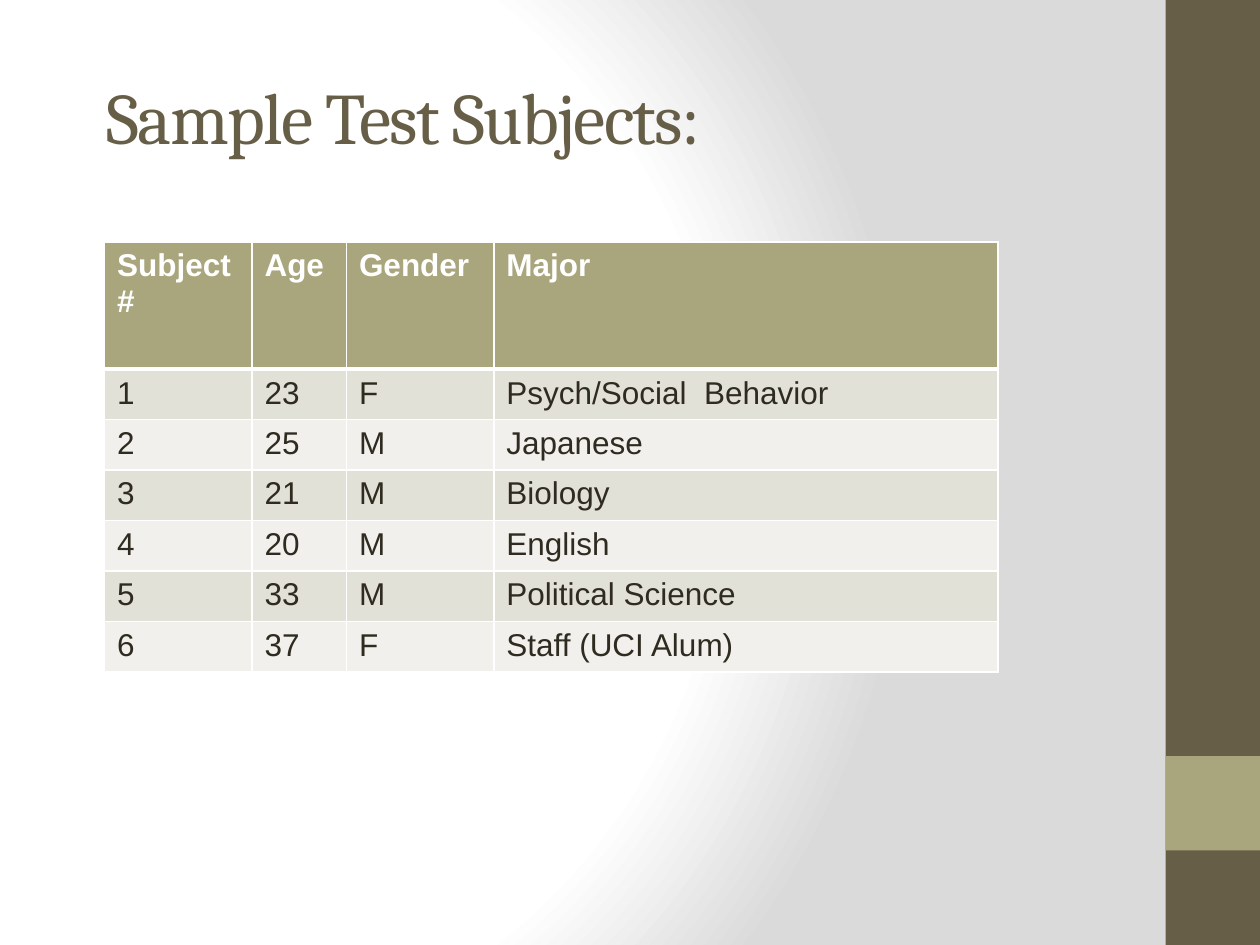
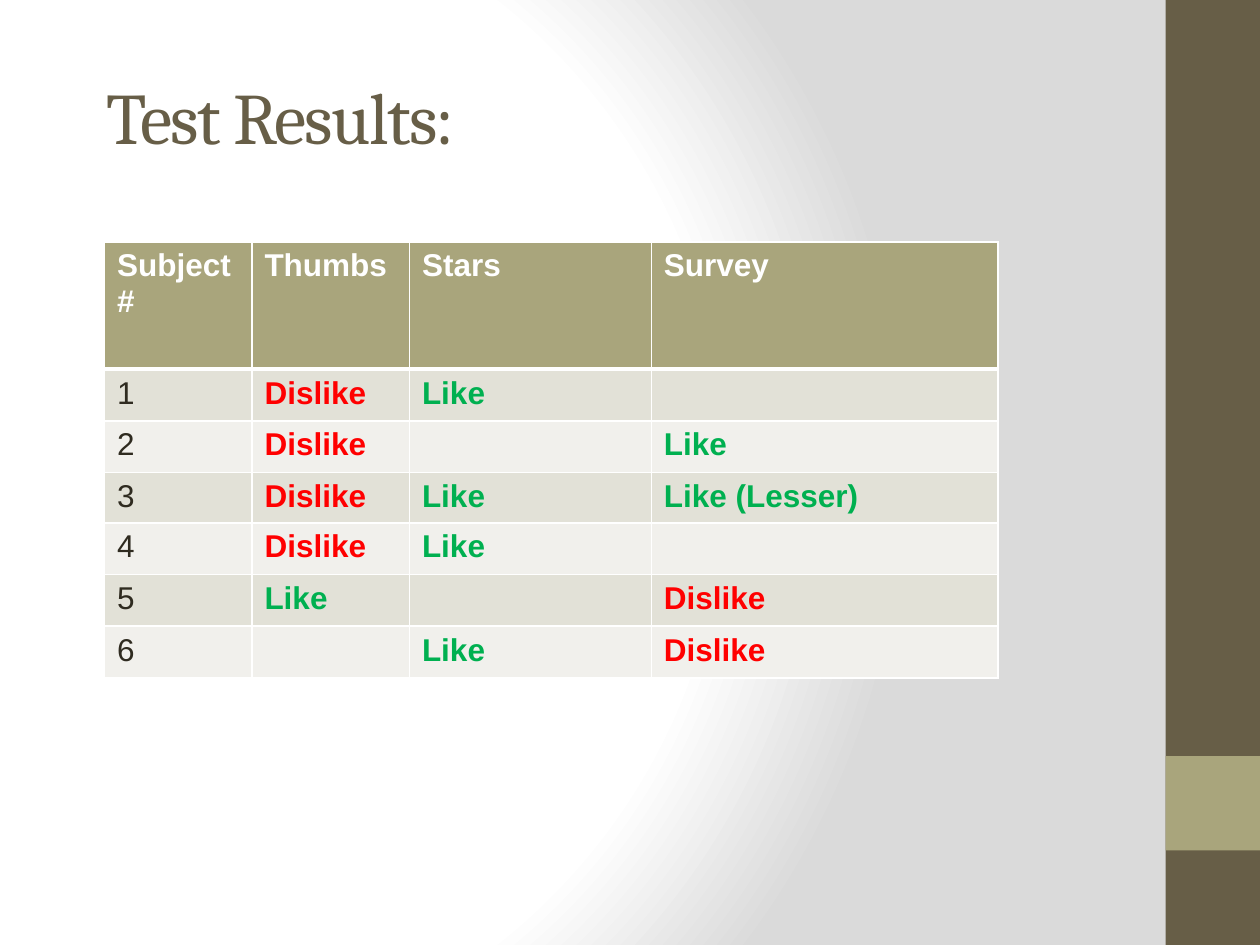
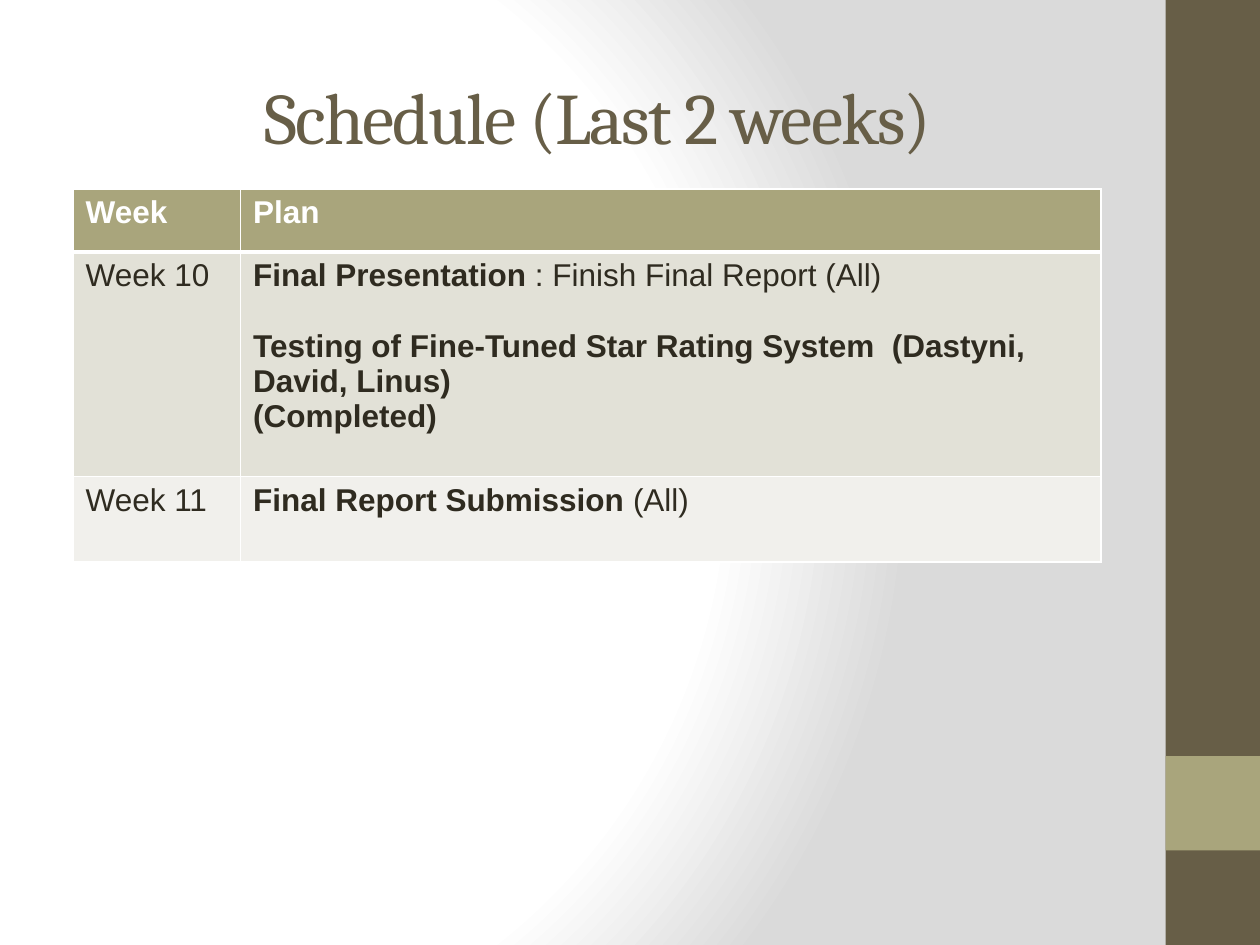
from dataclasses import dataclass
from typing import NamedTuple

from lxml import etree
from pptx import Presentation
from pptx import util as u
from pptx.dml.color import RGBColor
from pptx.enum import shapes, text
from pptx.oxml import parse_xml
from pptx.oxml.ns import nsdecls, qn

# Shared look
BROWN, OLIVE, INK, WHITE = "675E47", "A9A57C", "2F2B20", "FFFFFF"
ROW_FILLS = ("E2E1D7", "F1F0EC")
VERDICT_COLORS = {"Dislike": "FF0000", "Like": "00B050"}
TITLE_FONT, BODY_FONT = "Cambria", "Arial"
BODY_SIZE = u.Pt(18)
BACKGROUND_STOPS = ((0, WHITE), (75, WHITE), (100, "DADADA"))


class Band(NamedTuple):
    top: float
    height: float
    color: str


class Run(NamedTuple):
    text: str
    bold: bool = False
    color: str = INK


class Line(NamedTuple):
    runs: tuple[Run, ...]
    space_before: float = 0


Cell = tuple[Line, ...]
BANDS = (Band(0, 7.5, BROWN), Band(6, 0.75, OLIVE))


@dataclass
class TableSlide:
    title: str
    left: float
    top: float
    widths: tuple[float, ...]
    heights: tuple[float, ...]
    headings: tuple[str, ...]
    rows: list[tuple[Cell, ...]]
    title_left: float = 0.75
    title_width: float = 8.25
    title_align: text.PP_ALIGN = text.PP_ALIGN.LEFT


def rgb(color: str) -> RGBColor:
    return RGBColor.from_string(color)


def plain(words: str, bold: bool = False, color: str = INK) -> Cell:
    return (Line((Run(words, bold, color),)),) if words else ()


def verdict(words: str) -> Cell:
    """A bold answer in the colour of its first word."""
    return plain(words, True, VERDICT_COLORS[words.split()[0]]) if words else ()


def add_run(paragraph, words: str, **formats):
    """Add a run, setting its font from the given values."""
    run = paragraph.add_run()
    run.text = words
    run.font.color.rgb = rgb(formats.pop("color"))
    for name, value in formats.items():
        setattr(run.font, name, value)
    return run


def paint_background(slide) -> None:
    """Fill the slide with a round white-to-grey gradient."""
    slide.background.fill.solid()
    solid = slide.element.find(".//" + qn("a:solidFill"))
    stops = "".join(
        f'<a:gs pos="{place * 1000}"><a:srgbClr val="{color}"/></a:gs>'
        for place, color in BACKGROUND_STOPS
    )
    gradient = parse_xml(
        f'<a:gradFill {nsdecls("a")} rotWithShape="1"><a:gsLst>{stops}</a:gsLst>'
        '<a:path path="circle"><a:fillToRect l="20000" t="50000" r="100000" b="50000"/>'
        "</a:path></a:gradFill>"
    )
    solid.getparent().replace(solid, gradient)


def add_band(slide, band: Band) -> None:
    shape = slide.shapes.add_shape(
        shapes.MSO_SHAPE.RECTANGLE,
        u.Inches(9.25), u.Inches(band.top), u.Inches(0.75), u.Inches(band.height),
    )
    shape.shadow.inherit = False
    shape.fill.solid()
    shape.fill.fore_color.rgb = rgb(band.color)
    shape.line.fill.background()


def add_title(slide, content: TableSlide) -> None:
    box = slide.shapes.add_textbox(
        u.Inches(content.title_left), u.Inches(0.58),
        u.Inches(content.title_width), u.Inches(0.68),
    )
    frame = box.text_frame
    frame.word_wrap = True
    frame.vertical_anchor = text.MSO_ANCHOR.MIDDLE
    paragraph = frame.paragraphs[0]
    paragraph.alignment = content.title_align
    run = add_run(paragraph, content.title, color=BROWN, name=TITLE_FONT, size=u.Pt(41.4))
    run.font._element.set("spc", "-100")


def set_borders(cell, top: int, bottom: int) -> None:
    """Draw white borders; top and bottom widths are in points."""
    properties = cell._tc.get_or_add_tcPr()
    for side, width in {"L": 1, "R": 1, "T": top, "B": bottom}.items():
        line = etree.SubElement(properties, qn(f"a:ln{side}"), w=str(u.Pt(width)))
        fill = etree.SubElement(line, qn("a:solidFill"))
        etree.SubElement(fill, qn("a:srgbClr"), val=WHITE)


def fill_cell(cell, lines: Cell, color: str) -> None:
    cell.fill.solid()
    cell.fill.fore_color.rgb = rgb(color)
    frame = cell.text_frame
    for index, line in enumerate(lines):
        paragraph = frame.add_paragraph() if index else frame.paragraphs[0]
        if line.space_before:
            paragraph.space_before = u.Pt(line.space_before)
        for run in line.runs:
            add_run(paragraph, run.text, color=run.color, bold=run.bold,
                    name=BODY_FONT, size=BODY_SIZE)


def add_grid(slide, content: TableSlide) -> None:
    headings = tuple(plain(heading, True, WHITE) for heading in content.headings)
    rows = [headings, *content.rows]
    table = slide.shapes.add_table(
        len(rows), len(content.widths), u.Inches(content.left), u.Inches(content.top),
        u.Inches(sum(content.widths)), u.Inches(sum(content.heights)),
    ).table
    for column, width in zip(table.columns, content.widths):
        column.width = u.Inches(width)
    for index, (row, height) in enumerate(zip(rows, content.heights)):
        table.rows[index].height = u.Inches(height)
        color = ROW_FILLS[(index - 1) % 2] if index else OLIVE
        for column, lines in enumerate(row):
            cell = table.cell(index, column)
            set_borders(cell, top=3 if index == 1 else 1, bottom=1 if index else 3)
            fill_cell(cell, lines, color)


def add_table_slide(presentation, content: TableSlide) -> None:
    slide = presentation.slides.add_slide(presentation.slide_layouts[6])
    paint_background(slide)
    for band in BANDS:
        add_band(slide, band)
    add_title(slide, content)
    add_grid(slide, content)


# Slide content
SUBJECTS = [
    ("23", "F", "Psych/Social  Behavior"),
    ("25", "M", "Japanese"),
    ("21", "M", "Biology"),
    ("20", "M", "English"),
    ("33", "M", "Political Science"),
    ("37", "F", "Staff (UCI Alum)"),
]
RESULTS = [
    ("Dislike", "Like", ""),
    ("Dislike", "", "Like"),
    ("Dislike", "Like", "Like (Lesser)"),
    ("Dislike", "Like", ""),
    ("Like", "", "Dislike"),
    ("", "Like", "Dislike"),
]
WEEK_10_PLAN = (
    Line((Run("Final Presentation", True), Run(" : Finish Final Report (All)"))),
    Line((Run("Testing of Fine-Tuned Star Rating System  (Dastyni, David, Linus)", True),), 20),
    Line((Run("(Completed)", True),)),
)
WEEK_11_PLAN = (Line((Run("Final Report Submission", True), Run(" (All)"))),)

SLIDES = [
    TableSlide(
        "Sample Test Subjects:", 0.83, 1.92,
        (1.17, 0.75, 1.17, 4), (1.01,) + (0.38,) * len(SUBJECTS),
        ("Subject #", "Age", "Gender", "Major"),
        [tuple(map(plain, (str(number), *subject)))
         for number, subject in enumerate(SUBJECTS, 1)],
    ),
    TableSlide(
        "Test Results:", 0.83, 1.92,
        (1.17, 1.25, 1.92, 2.75),
        (1.01, *(0.38 if all(answers) else 0.41 for answers in RESULTS)),
        ("Subject #", "Thumbs", "Stars", "Survey"),
        [(plain(str(number)), *map(verdict, answers))
         for number, answers in enumerate(RESULTS, 1)],
    ),
    TableSlide(
        "Schedule (Last 2 weeks)", 0.58, 1.5,
        (1.33, 6.83), (0.5, 1.78, 0.68),
        ("Week", "Plan"),
        [(plain("Week 10"), WEEK_10_PLAN), (plain("Week 11"), WEEK_11_PLAN)],
        title_left=0.58, title_width=8.33, title_align=text.PP_ALIGN.CENTER,
    ),
]


def main() -> None:
    presentation = Presentation()
    presentation.slide_width = u.Inches(10)
    presentation.slide_height = u.Inches(7.5)
    for content in SLIDES:
        add_table_slide(presentation, content)
    presentation.save("out.pptx")


if __name__ == "__main__":
    main()
